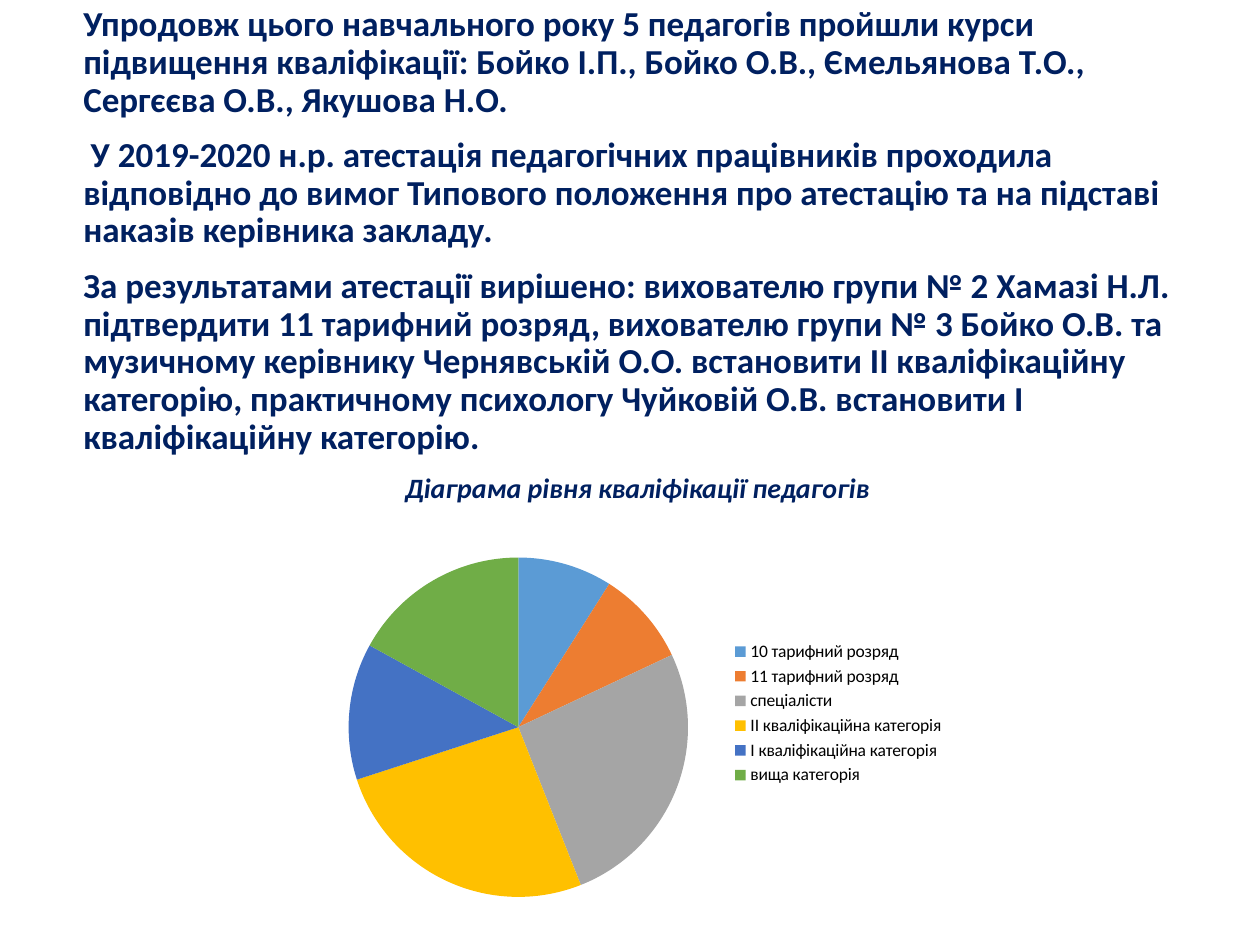
from lxml import etree
from pptx import Presentation
from pptx.chart.data import CategoryChartData as ChartData
from pptx.dml.color import RGBColor as Rgb
from pptx.enum.chart import XL_CHART_TYPE as Kind, XL_LEGEND_POSITION as Side
from pptx.enum.text import PP_ALIGN as Align
from pptx.oxml.ns import qn
from pptx.util import Cm, Pt

FONT = "Calibri"
COLORS = {"navy": "002060", "black": "000000"}

NOTES = [
    "Упродовж цього навчального року 5 педагогів пройшли курси підвищення "
    "кваліфікації: Бойко І.П., Бойко О.В., Ємельянова Т.О., Сергєєва О.В., "
    "Якушова Н.О.",
    "У 2019-2020 н.р. атестація педагогічних працівників проходила відповідно "
    "до вимог Типового положення про атестацію та на підставі наказів "
    "керівника закладу.",
    "За результатами атестації вирішено: вихователю групи № 2 Хамазі Н.Л. "
    "підтвердити 11 тарифний розряд, вихователю групи № 3 Бойко О.В. та "
    "музичному керівнику Чернявській О.О. встановити ІІ кваліфікаційну "
    "категорію, практичному психологу Чуйковій О.В. встановити І "
    "кваліфікаційну категорію.",
]
TITLE = "Діаграма рівня кваліфікації педагогів"

# Level, share, slice colour
LEVELS = [
    ("10 тарифний розряд", 9, "5B9BD5"),
    ("11 тарифний розряд", 9, "ED7D31"),
    ("спеціалісти", 26, "A5A5A5"),
    ("ІІ кваліфікаційна категорія", 26, "FFC000"),
    ("І кваліфікаційна категорія", 13, "4472C4"),
    ("вища категорія", 17, "70AD47"),
]
PLOT = {"x": 0.084, "y": 0.088, "w": 0.539, "h": 0.898}


def set_font(font, size, color, bold=False, italic=False):
    font.name, font.size = FONT, Pt(size)
    font.bold, font.italic = bold, italic
    font.color.rgb = Rgb.from_string(COLORS[color])


def add_para(frame, text, size=20, left=0, first=0, italic=False, align=Align.LEFT):
    start = not frame.text
    para = frame.paragraphs[0] if start else frame.add_paragraph()
    para.text = text
    para.alignment = align
    para.line_spacing = 0.9
    para.space_before = Pt(0 if start else 10)
    props = para._p.get_or_add_pPr()
    props.set("marL", str(Cm(left)))
    props.set("indent", str(Cm(first)))
    set_font(para.runs[0].font, size, "navy", True, italic)


def add_text(slide):
    box = slide.shapes.add_textbox(Cm(0.79), Cm(0), Cm(24.13), Cm(17.88))
    frame = box.text_frame
    frame.word_wrap = True
    for num, note in enumerate(NOTES):
        add_para(frame, note, left=0.64, first=0.15 if num == 1 else 0)
    add_para(frame, TITLE, size=16, italic=True, align=Align.CENTER)


def place_plot(chart):
    area = chart._chartSpace.chart.plotArea
    for old in area.findall(qn("c:layout")):
        area.remove(old)
    layout = etree.Element(qn("c:layout"))
    area.insert(0, layout)
    manual = etree.SubElement(layout, qn("c:manualLayout"))
    rules = {"layoutTarget": "inner", "xMode": "edge", "yMode": "edge", **PLOT}
    for name, val in rules.items():
        etree.SubElement(manual, qn("c:" + name)).set("val", str(val))


def add_pie(slide):
    names, shares, fills = zip(*LEVELS)
    data = ChartData()
    data.categories = names
    data.add_series("Series 1", shares)
    chart = slide.shapes.add_chart(
        Kind.PIE, Cm(5.61), Cm(10.57), Cm(13.69), Cm(7.62), data
    ).chart
    chart.has_title = False
    set_font(chart.font, 10, "black")
    chart.has_legend = True
    chart.legend.position = Side.RIGHT
    chart.legend.include_in_layout = False

    # Slices
    plot = chart.plots[0]
    plot.vary_by_categories = True
    for num, color in enumerate(fills):
        fill = plot.series[0].points[num].format.fill
        fill.solid()
        fill.fore_color.rgb = Rgb.from_string(color)
    place_plot(chart)


def main():
    deck = Presentation()
    deck.slide_width, deck.slide_height = Cm(25.4), Cm(19.05)
    slide = deck.slides.add_slide(deck.slide_layouts[6])
    add_text(slide)
    add_pie(slide)
    deck.save("out.pptx")


if __name__ == "__main__":
    main()
